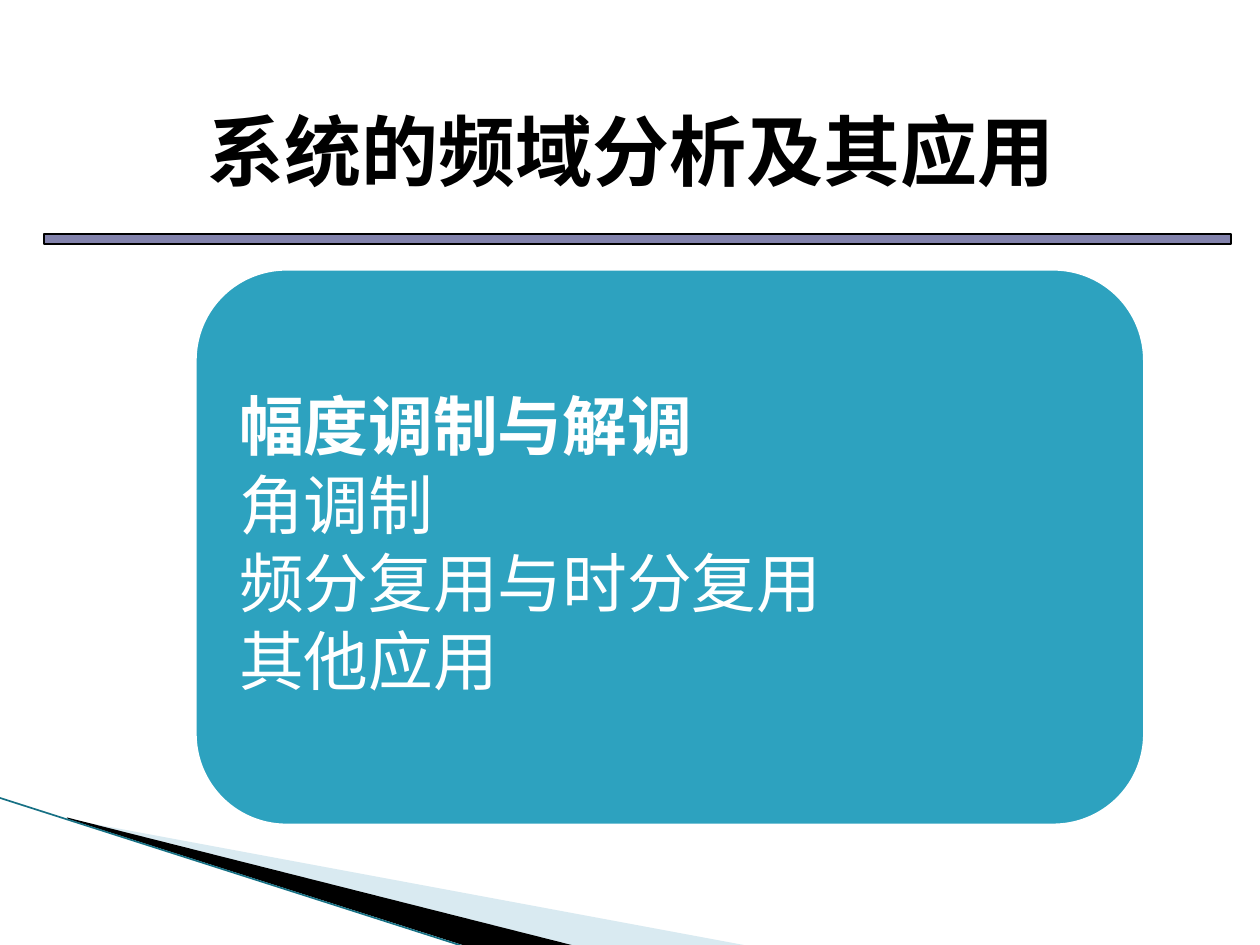
"""Build the outline slide for frequency-domain system analysis."""
from lxml import etree
from pptx import Presentation
from pptx.dml.color import RGBColor
from pptx.enum.lang import MSO_LANGUAGE_ID
from pptx.enum.shapes import MSO_CONNECTOR, MSO_SHAPE
from pptx.enum.text import MSO_ANCHOR, PP_ALIGN
from pptx.oxml.ns import qn
from pptx.util import Cm, Pt

RECTANGLE, ROUNDED = MSO_SHAPE.RECTANGLE, MSO_SHAPE.ROUNDED_RECTANGLE
STRAIGHT = MSO_CONNECTOR.STRAIGHT
LEFT, CENTER = PP_ALIGN.LEFT, PP_ALIGN.CENTER
MIDDLE = MSO_ANCHOR.MIDDLE
CHINESE = MSO_LANGUAGE_ID.SIMPLIFIED_CHINESE

BLACK = RGBColor(0x00, 0x00, 0x00)
WHITE = RGBColor(0xFF, 0xFF, 0xFF)
TEAL = RGBColor(0x2D, 0xA2, 0xBF)
DARK_TEAL = RGBColor(0x16, 0x70, 0x84)
PALE_BLUE = RGBColor(0xA0, 0xCB, 0xDC)
PURPLE = RGBColor(0x66, 0x66, 0x99)

TITLE = "系统的频域分析及其应用"
TOPICS = ["幅度调制与解调", "角调制", "频分复用与时分复用", "其他应用"]
CURRENT_TOPIC = TOPICS[0]

SLIDE_SIZE = (25.4, 19.05)
TITLE_BOX = (1.3, 1.12, 22.86, 3.81)
RULE_BOX = (0.89, 4.72, 23.93, 0.2)
PANEL_BOX = (3.89, 5.38, 19.23, 11.3)
PANEL_INSET = 0.55
SWOOSHES = [
    ([(1.4, 16.52), (15.1, 19.07), (11.58, 19.07), (1.4, 16.5)], PALE_BLUE, 40),
    ([(1.35, 16.48), (11.6, 19.07), (9.45, 19.09), (1.37, 16.51)], BLACK, 100),
]
SWOOSH_EDGE = (-0.02, 16.08, 9.42, 19.1)


def lengths(values):
    return [Cm(value) for value in values]


def paint(shape, color, opacity=100, line=None, width=0):
    shape.shadow.inherit = False
    shape.fill.solid()
    shape.fill.fore_color.rgb = color
    if opacity < 100:
        tint = shape.fill._xPr.find(".//" + qn("a:srgbClr"))
        etree.SubElement(tint, qn("a:alpha"), val=str(opacity * 1000))
    if line is None:
        shape.line.fill.background()
    else:
        shape.line.color.rgb = line
        shape.line.width = Pt(width)


def add_text(slide, box, lines, *, font, size, color, bold_lines, align=LEFT,
             margin=None, line_spacing=None, space_after=0):
    frame = slide.shapes.add_textbox(*lengths(box)).text_frame
    frame.word_wrap = True
    frame.vertical_anchor = MIDDLE
    if margin is not None:
        frame.margin_left = frame.margin_right = Cm(margin)
        frame.margin_top = frame.margin_bottom = Cm(margin)
    for index, line in enumerate(lines):
        paragraph = frame.add_paragraph() if index else frame.paragraphs[0]
        paragraph.alignment = align
        paragraph.line_spacing = line_spacing
        paragraph.space_after = Pt(space_after)
        run = paragraph.add_run()
        run.text = line
        run.font.name = font
        run.font.size = Pt(size)
        run.font.bold = line in bold_lines
        run.font.color.rgb = color
        run.font.language_id = CHINESE


def add_swooshes(slide):
    for points, color, opacity in SWOOSHES:
        start, *rest = [lengths(point) for point in points]
        builder = slide.shapes.build_freeform(*start)
        builder.add_line_segments(rest, close=True)
        paint(builder.convert_to_shape(), color, opacity)
    edge = slide.shapes.add_connector(STRAIGHT, *lengths(SWOOSH_EDGE))
    edge.line.color.rgb = DARK_TEAL
    edge.line.width = Pt(0.95)
    etree.SubElement(edge._element.spPr, qn("a:effectLst"))


def main():
    deck = Presentation()
    deck.slide_width, deck.slide_height = lengths(SLIDE_SIZE)
    slide = deck.slides.add_slide(deck.slide_layouts[6])
    add_swooshes(slide)
    add_text(slide, TITLE_BOX, [TITLE], font="Arial", size=44, color=BLACK,
             bold_lines=[TITLE], align=CENTER)
    rule = slide.shapes.add_shape(RECTANGLE, *lengths(RULE_BOX))
    paint(rule, PURPLE, 81, line=BLACK, width=0.75)
    panel = slide.shapes.add_shape(ROUNDED, *lengths(PANEL_BOX))
    paint(panel, TEAL, line=WHITE, width=4.33)
    left, top, width, height = PANEL_BOX
    topics_box = (left + PANEL_INSET, top + PANEL_INSET,
                  width - 2 * PANEL_INSET, height - 2 * PANEL_INSET)
    add_text(slide, topics_box, TOPICS, font="Courier New", size=37, color=WHITE,
             bold_lines=[CURRENT_TOPIC], margin=0.38, line_spacing=0.9,
             space_after=4.7)
    deck.save("out.pptx")


if __name__ == "__main__":
    main()
